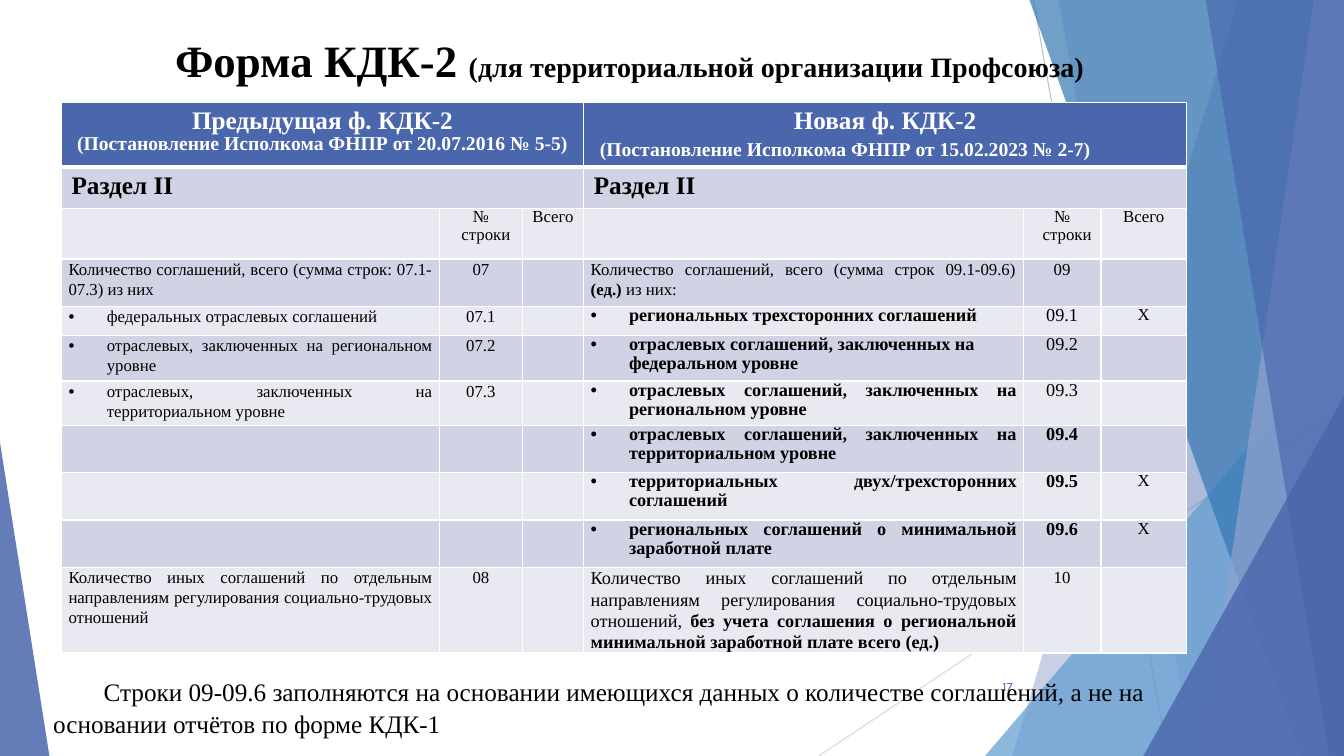
from lxml import etree
from pptx import Presentation
from pptx.dml.color import RGBColor
from pptx.enum.shapes import MSO_CONNECTOR, MSO_SHAPE
from pptx.enum.text import MSO_ANCHOR, MSO_AUTO_SIZE, PP_ALIGN
from pptx.oxml.ns import qn
from pptx.util import Inches, Pt

LEFT, CENTER, RIGHT, JUSTIFY = PP_ALIGN.LEFT, PP_ALIGN.CENTER, PP_ALIGN.RIGHT, PP_ALIGN.JUSTIFY
TOP, MIDDLE = MSO_ANCHOR.TOP, MSO_ANCHOR.MIDDLE
NO_FIT = MSO_AUTO_SIZE.NONE
STRAIGHT = MSO_CONNECTOR.STRAIGHT
TRIANGLE = MSO_SHAPE.ISOSCELES_TRIANGLE

BLACK = RGBColor(0x00, 0x00, 0x00)
WHITE = RGBColor(0xFF, 0xFF, 0xFF)
BLUE = RGBColor(0x4A, 0x66, 0xAC)
SKY = RGBColor(0x62, 0x9D, 0xD1)
OCEAN = RGBColor(0x34, 0x77, 0xB2)
LAVENDER = RGBColor(0x90, 0xA2, 0xCF)
GREY = RGBColor(0xBF, 0xBF, 0xBF)
LIGHT_GREY = RGBColor(0xD9, 0xD9, 0xD9)
BAND_DARK = RGBColor(0xD0, 0xD3, 0xE3)
BAND_LIGHT = RGBColor(0xE9, 0xEA, 0xF1)

WIDTH, HEIGHT = 13.33, 7.5
COLUMNS = [3.75, 0.82, 0.61, 4.36, 0.77, 0.85]
ROWS = [0.64, 0.41, 0.5, 0.47, 0.29, 0.45, 0.44, 0.47, 0.47, 0.47, 0.85]

TIGHT = {"line_spacing": 0.95}
LOOSE = {"line_spacing": 1.07, "space_after": Pt(8)}
BULLET = {"hang": 0.38}
MID = {"alignment": CENTER}
FULL = {"alignment": JUSTIFY}
S12 = {"size": Pt(12)}
S13 = {"size": Pt(13)}
B13 = {"size": Pt(13), "bold": True}


class Slide:
    font = "Times New Roman"

    def __init__(self, prs):
        self.s = prs.slides.add_slide(prs.slide_layouts[5])
        self.shapes = self.s.shapes

    def line(self, start, end, color):
        c = self.shapes.add_connector(STRAIGHT, *map(Inches, start + end))
        c.line.color.rgb = color
        c.line.width = Pt(0.75)
        etree.SubElement(c.element.spPr, qn("a:effectLst"))

    def paint(self, sp, color, opacity):
        sp.shadow.inherit = False
        sp.line.fill.background()
        sp.fill.solid()
        sp.fill.fore_color.rgb = color
        clr = sp.element.spPr.find(qn("a:solidFill"))[0]
        etree.SubElement(clr, qn("a:alpha")).set("val", str(opacity * 1000))

    def ribbon(self, top, bottom, color, opacity):
        fb = self.shapes.build_freeform(Inches(top), 0, 1.0)
        corners = [(WIDTH, 0), (WIDTH, HEIGHT), (bottom, HEIGHT)]
        fb.add_line_segments([(Inches(x), Inches(y)) for x, y in corners], close=True)
        self.paint(fb.convert_to_shape(), color, opacity)

    def triangle(self, box, apex, color, opacity):
        sp = self.shapes.add_shape(TRIANGLE, *map(Inches, box))
        sp.adjustments[0] = apex
        self.paint(sp, color, opacity)

    def fill_text(self, tf, paragraphs, **base):
        for i, (fmt, runs) in enumerate(paragraphs):
            p = tf.paragraphs[0] if i == 0 else tf.add_paragraph()
            for key, value in fmt.items():
                if key not in ("hang", "first"):
                    setattr(p, key, value)
            pPr = p._p.get_or_add_pPr()
            if "first" in fmt:
                pPr.set("indent", str(Inches(fmt["first"])))
            if "hang" in fmt:
                pPr.set("marL", str(Inches(fmt["hang"])))
                pPr.set("indent", str(-Inches(fmt["hang"])))
                etree.SubElement(pPr, qn("a:buFont")).set("typeface", "Arial")
                etree.SubElement(pPr, qn("a:buChar")).set("char", "•")
            for text, style in runs:
                r = p.add_run()
                r.text = text
                font = {"name": self.font, "bold": False, "color": BLACK, **base, **style}
                r.font.color.rgb = font.pop("color")
                for key, value in font.items():
                    setattr(r.font, key, value)

    def frame(self, tf, anchor):
        for key, value in {"word_wrap": True, "auto_size": NO_FIT, "vertical_anchor": anchor}.items():
            setattr(tf, key, value)

    def title(self, box, paragraphs):
        sp = self.shapes.title
        sp.left, sp.top, sp.width, sp.height = map(Inches, box)
        self.frame(sp.text_frame, MIDDLE)
        self.fill_text(sp.text_frame, paragraphs, bold=True)
        self.shapes.element.append(sp.element)

    def text(self, box, paragraphs, anchor=TOP):
        tf = self.shapes.add_textbox(*map(Inches, box)).text_frame
        self.frame(tf, anchor)
        self.fill_text(tf, paragraphs)

    def cell(self, cell, paragraphs, fill, margins=(0.07, 0), bottom=1, **base):
        cell.margin_left = cell.margin_right = Inches(margins[0])
        cell.margin_top = cell.margin_bottom = Inches(margins[1])
        cell.fill.solid()
        cell.fill.fore_color.rgb = fill
        tcPr = cell._tc.get_or_add_tcPr()
        for i, side in enumerate(("lnL", "lnR", "lnT", "lnB")):
            ln = etree.Element(qn("a:" + side), w=str(Pt(bottom if side == "lnB" else 1)))
            solid = etree.SubElement(ln, qn("a:solidFill"))
            etree.SubElement(solid, qn("a:srgbClr")).set("val", str(WHITE))
            tcPr.insert(i, ln)
        if paragraphs:
            self.fill_text(cell.text_frame, paragraphs, **base)
        else:
            p = cell.text_frame.paragraphs[0]._p
            etree.SubElement(p, qn("a:endParaRPr")).set("sz", "1200")

    def table(self, left, top, headers, section, rows):
        box = (left, top, sum(COLUMNS), sum(ROWS))
        tbl = self.shapes.add_table(len(ROWS), len(COLUMNS), *map(Inches, box)).table
        tbl.first_row = tbl.horz_banding = False
        for col, width in zip(tbl.columns, COLUMNS):
            col.width = Inches(width)
        for row, height in zip(tbl.rows, ROWS):
            row.height = Inches(height)
        for col, header in zip((0, 3), headers):
            for row in (0, 1):
                tbl.cell(row, col).merge(tbl.cell(row, col + 2))
            self.cell(tbl.cell(0, col), header, BLUE, (0.1, 0.05), 3, bold=True, color=WHITE)
            self.cell(tbl.cell(1, col), section, BAND_DARK, (0.1, 0.05), bold=True)
        for i, row in enumerate(rows, 2):
            for j, paragraphs in enumerate(row):
                self.cell(tbl.cell(i, j), paragraphs, BAND_DARK if i % 2 else BAND_LIGHT)


def para(text, style, *formats):
    fmt = {}
    for f in formats:
        fmt.update(f)
    return [(fmt, [(text, style)])]


def old(text, number, *formats):
    return [para(text, S12, FULL, LOOSE, *formats), para(number, S12, MID, LOOSE), None]


def new(text, number, style=S13, mark=None, align=FULL):
    return [para(text, B13, align, TIGHT, BULLET), para(number, style, MID, TIGHT),
            para(mark, S12, MID, TIGHT) if mark else None]


def header(form, decree, *formats):
    return para(form, {"size": Pt(18)}, MID, TIGHT) + para(decree, {"size": Pt(14)}, TIGHT, *formats)


def main():
    prs = Presentation()
    prs.slide_width, prs.slide_height = Inches(WIDTH), Inches(HEIGHT)
    slide = Slide(prs)

    slide.line((10.25, 0), (11.58, HEIGHT), GREY)
    slide.line((WIDTH, 4.03), (8.12, HEIGHT), LIGHT_GREY)
    slide.ribbon(12.28, 10.04, BLUE, 30)
    slide.ribbon(10.5, 11.83, BLUE, 20)
    slide.triangle((9.77, 3.33, 3.56, 4.17), 1, SKY, 72)
    slide.ribbon(10.21, 12.91, OCEAN, 70)
    slide.ribbon(13.03, 11.92, LAVENDER, 70)
    slide.ribbon(11.96, 13.18, BLUE, 65)
    slide.triangle((11.34, 3.93, 1.99, 3.57), 1, BLUE, 80)
    slide.triangle((0, 4.39, 0.49, 3.11), 0, BLUE, 85)
    slide.text((9.39, 6.61, 0.75, 0.4), para(
        "17", {"size": Pt(9), "name": "Karla", "color": BLUE}, {"alignment": RIGHT}), MIDDLE)

    headers = [
        header("Предыдущая ф. КДК-2", "(Постановление Исполкома ФНПР от 20.07.2016 № 5-5)", MID),
        header("Новая ф. КДК-2", "(Постановление Исполкома ФНПР от 15.02.2023 № 2-7)",
               {"alignment": LEFT, "first": 0.06, "space_before": Pt(4)}),
    ]
    number = para("№", S12, MID, TIGHT) + para("строки", S12, MID, TIGHT, {"first": 0.1})
    captions = [None, number, para("Всего", S12, MID, TIGHT)]
    total = [({**FULL, **LOOSE}, [("Количество соглашений, всего (сумма строк 09.1-09.6) ", S12),
                                  ("(ед.) ", {**S12, "bold": True}), ("из них:", S12)])]
    others = [({**FULL, **LOOSE}, [
        ("Количество иных соглашений по отдельным направлениям регулирования "
         "социально-трудовых отношений, ", S13),
        ("без учета соглашения о региональной минимальной заработной плате всего (ед.)", B13)])]
    blank = [None] * 3
    rows = [
        captions * 2,
        old("Количество соглашений, всего (сумма строк: 07.1-07.3) из них", "07")
        + [total, para("09", S12, MID, LOOSE), None],
        old("федеральных отраслевых соглашений", "07.1", BULLET)
        + new("региональных трехсторонних соглашений", "09.1", mark="Χ", align={"alignment": LEFT}),
        old("отраслевых, заключенных на региональном уровне", "07.2", BULLET)
        + new("отраслевых соглашений, заключенных на федеральном уровне", "09.2", align={"alignment": LEFT}),
        old("отраслевых, заключенных на территориальном уровне", "07.3", BULLET)
        + new("отраслевых соглашений, заключенных на региональном уровне", "09.3"),
        blank + new("отраслевых соглашений, заключенных на территориальном уровне", "09.4", B13),
        blank + new("территориальных двух/трехсторонних соглашений", "09.5", B13, "Χ"),
        blank + new("региональных соглашений о минимальной заработной плате", "09.6", B13, "Χ"),
        old("Количество иных соглашений по отдельным направлениям регулирования "
            "социально-трудовых отношений", "08")
        + [others, para("10", S12, MID, LOOSE), None],
    ]
    section = para("Раздел II", {"size": Pt(18)}, {"alignment": LEFT})
    slide.table(0.61, 1.02, headers, section, rows)

    slide.title((0.99, 0.21, 10.51, 0.77), [(MID, [
        ("Форма КДК-2 ", {"size": Pt(32)}),
        ("(для территориальной организации Профсоюза)", {"size": Pt(20)})])])
    slide.text((0.43, 6.64, 11.33, 0.71), para(
        "Строки 09-09.6 заполняются на основании имеющихся данных о количестве соглашений, "
        "а не на основании отчётов по форме КДК-1", {"size": Pt(18)},
        {"first": 0.5, "line_spacing": 1.07}))
    prs.save("out.pptx")


if __name__ == "__main__":
    main()
